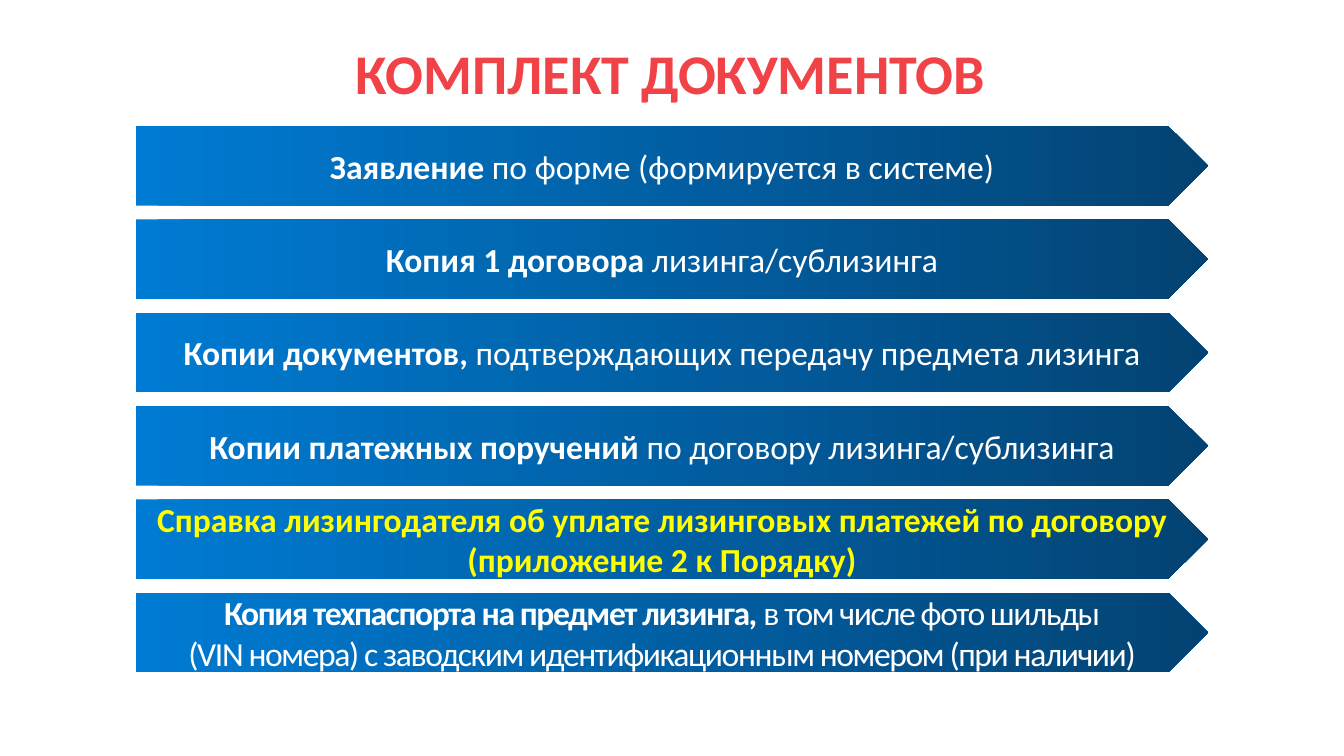
from pptx import Presentation
from pptx.dml.color import RGBColor
from pptx.enum.shapes import MSO_SHAPE as Preset
from pptx.enum.text import MSO_ANCHOR as Anchor, PP_ALIGN as Align
from pptx.util import Inches, Pt

RED = RGBColor(0xF0, 0x42, 0x47)
WHITE = RGBColor(0xFF, 0xFF, 0xFF)
YELLOW = RGBColor(0xFF, 0xFF, 0x00)
BLUE_LIGHT = RGBColor(0x00, 0x7B, 0xD3)
BLUE_DARK = RGBColor(0x03, 0x43, 0x73)

BAR_LEFT, BAR_TOP, BAR_WIDTH, BAR_HEIGHT = 1.35, 1.25, 10.63, 0.79
LAST_BAR_TOP = 5.88


class DocumentsSlide:
    font_name = "Calibri"

    def __init__(self, deck):
        self.page = deck.slides.add_slide(deck.slide_layouts[6])

    def add_lines(self, box, lines, size, color, spacing=0):
        """Fill a box with lines, each a list of (text, bold) pairs."""
        frame = box.text_frame
        frame.word_wrap = True
        frame.vertical_anchor = Anchor.MIDDLE
        for index, spans in enumerate(lines):
            para = frame.add_paragraph() if index else frame.paragraphs[0]
            para.alignment = Align.CENTER
            for text, bold in spans:
                span = para.add_run()
                span.text = text
                style = {"name": self.font_name, "size": Pt(size), "bold": bold}
                for key, value in style.items():
                    setattr(span.font, key, value)
                span.font.color.rgb = color
                if spacing:
                    span._r.get_or_add_rPr().set("spc", str(spacing))

    def title(self, text):
        box = self.page.shapes.add_textbox(
            Inches(0), Inches(0.22), Inches(13.3), Inches(1))
        self.add_lines(box, [[(text, True)]], 40, RED)

    def bar(self, top, lines, color=WHITE, spacing=0):
        shape = self.page.shapes.add_shape(
            Preset.PENTAGON, Inches(BAR_LEFT), Inches(top),
            Inches(BAR_WIDTH), Inches(BAR_HEIGHT))
        shape.shadow.inherit = False
        shape.line.fill.background()
        shape.fill.gradient()
        shape.fill.gradient_angle = 0
        for stop, shade in zip(shape.fill.gradient_stops, (BLUE_LIGHT, BLUE_DARK)):
            stop.color.rgb = shade
        self.add_lines(shape, lines, 24, color, spacing)


# Required documents, from top to bottom
DOCUMENTS = [
    {"lines": [[("Заявление", True), (" по форме (формируется в системе)", False)]]},
    {"lines": [[("Копия 1 договора", True), (" лизинга/сублизинга", False)]]},
    {"lines": [[("Копии документов, ", True),
                ("подтверждающих передачу предмета лизинга", False)]]},
    {"lines": [[("Копии платежных поручений", True),
                (" по договору лизинга/сублизинга", False)]]},
    {"lines": [[("Справка лизингодателя об уплате лизинговых платежей "
                 "по договору (приложение 2 к Порядку)", True)]],
     "color": YELLOW},
    {"lines": [[("Копия техпаспорта на предмет лизинга, ", True),
                ("в том числе фото шильды", False)],
               [("(VIN номера) с заводским идентификационным номером "
                 "(при наличии)", False)]],
     "spacing": -100},
]


def main():
    deck = Presentation()
    deck.slide_width, deck.slide_height = Inches(13.33), Inches(7.5)
    slide = DocumentsSlide(deck)

    # Heading
    slide.title("КОМПЛЕКТ ДОКУМЕНТОВ")

    # Evenly spaced stack of arrow bars
    step = (LAST_BAR_TOP - BAR_TOP) / (len(DOCUMENTS) - 1)
    for row, document in enumerate(DOCUMENTS):
        slide.bar(BAR_TOP + row * step, **document)

    deck.save("out.pptx")


if __name__ == "__main__":
    main()
